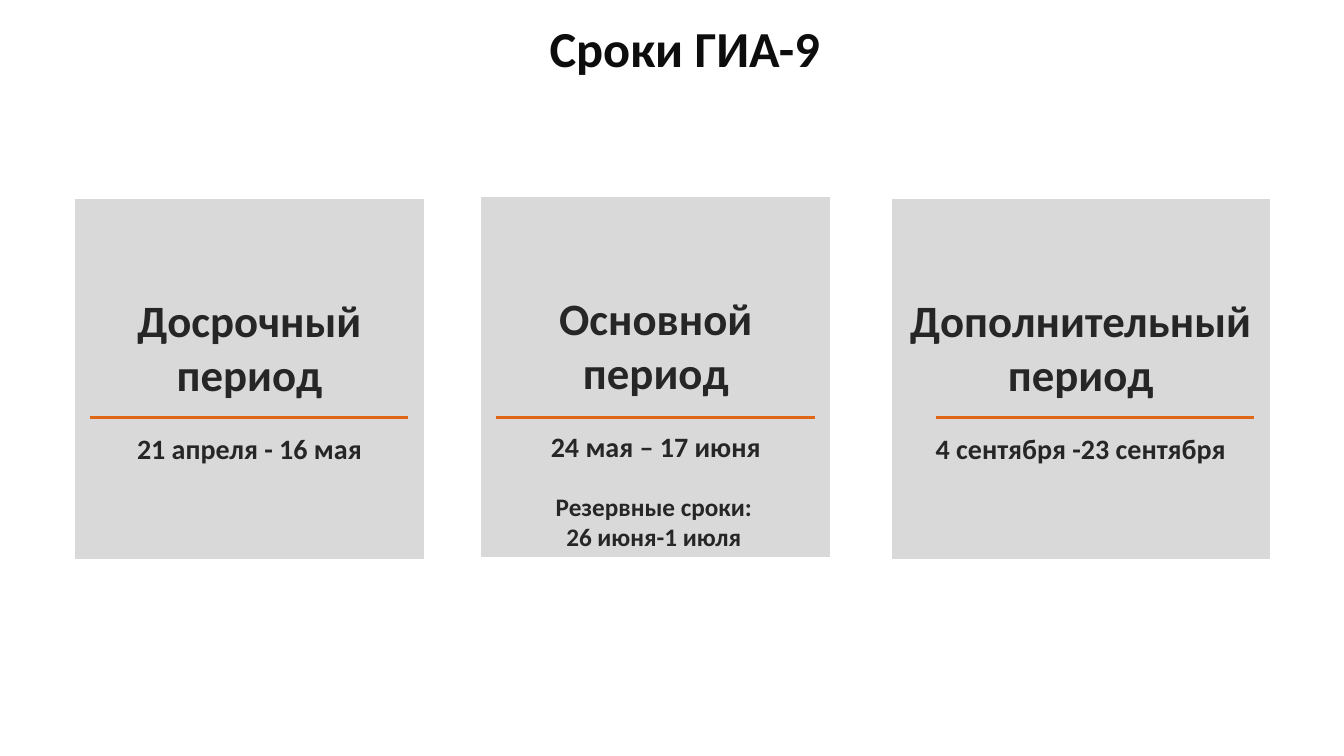
from pptx import Presentation
from pptx.dml.color import RGBColor
from pptx.enum.shapes import MSO_CONNECTOR, MSO_SHAPE
from pptx.enum.text import MSO_ANCHOR, PP_ALIGN
from pptx.oxml.ns import qn
from pptx.util import Inches, Pt

RECTANGLE, STRAIGHT = MSO_SHAPE.RECTANGLE, MSO_CONNECTOR.STRAIGHT
LEFT, CENTER = PP_ALIGN.LEFT, PP_ALIGN.CENTER
TOP, MIDDLE = MSO_ANCHOR.TOP, MSO_ANCHOR.MIDDLE
TITLE_ONLY = 5

COLORS = {"title": "0D0D0D", "text": "262626", "card": "D9D9D9", "rule": "E26714"}
CARD_HEIGHT = 3.56
RULE_TOP, RULE_LENGTH, RULE_INSET = 4.14, 3.16, 0.15

# left, top, width, period, dates
PERIODS = [
    (0.75, 1.98, 3.45, "Досрочный период", "21 апреля - 16 мая"),
    (4.78, 1.96, 3.45, "Основной период", "24 мая – 17 июня"),
    (8.85, 1.98, 3.74, "Дополнительный период", "4 сентября -23 сентября"),
]
RESERVE_DATES = [("Резервные сроки:", 18, 0), ("26 июня-1 июля", 18, 0)]


def color(name):
    return RGBColor.from_string(COLORS[name])


def write_lines(frame, lines, anchor=TOP, align=CENTER, ink="text", wrap=True):
    """Fill a frame with bold lines given as (text, size, space before)."""
    frame.word_wrap = wrap
    frame.vertical_anchor = anchor
    for index, (text, size, gap) in enumerate(lines):
        para = frame.paragraphs[0] if index == 0 else frame.add_paragraph()
        para.text = text
        para.alignment = align
        para.line_spacing = 1.0
        para.space_before = Pt(gap)
        para.font.name = "Calibri"
        para.font.size = Pt(size)
        para.font.bold = True
        para.font.color.rgb = color(ink)


def add_title(page, left, top, width, height):
    title = page.shapes.title
    title.left, title.top = Inches(left), Inches(top)
    title.width, title.height = Inches(width), Inches(height)
    write_lines(title.text_frame, [("Сроки ГИА-9", 36, 0)],
                align=LEFT, ink="title", wrap=False)


def add_period(page, left, top, width, period, dates):
    card = page.shapes.add_shape(RECTANGLE, Inches(left), Inches(top),
                                 Inches(width), Inches(CARD_HEIGHT))
    card.shadow.inherit = False
    card.fill.solid()
    card.fill.fore_color.rgb = color("card")
    card.line.color.rgb = color("card")
    card.line.width = Pt(1)
    write_lines(card.text_frame, [(period, 32, 0), (dates, 20, 22)], anchor=MIDDLE)

    rule_end = left + width - RULE_INSET
    rule = page.shapes.add_connector(STRAIGHT, Inches(rule_end - RULE_LENGTH), Inches(RULE_TOP),
                                     Inches(rule_end), Inches(RULE_TOP))
    rule.line.color.rgb = color("rule")
    rule.line.width = Pt(2)
    properties = rule.element.find(qn("p:spPr"))
    properties.append(properties.makeelement(qn("a:effectLst"), {}))


def add_reserve_dates(page, left, top, width, height):
    box = page.shapes.add_textbox(Inches(left), Inches(top), Inches(width), Inches(height))
    write_lines(box.text_frame, RESERVE_DATES)


def main():
    deck = Presentation()
    deck.slide_width, deck.slide_height = Inches(13.33), Inches(7.5)
    page = deck.slides.add_slide(deck.slide_layouts[TITLE_ONLY])
    add_title(page, 5.35, 0.12, 2.92, 0.71)
    for period in PERIODS:
        add_period(page, *period)
    add_reserve_dates(page, 5.35, 4.82, 2.27, 0.71)
    deck.save("out.pptx")


if __name__ == "__main__":
    main()
